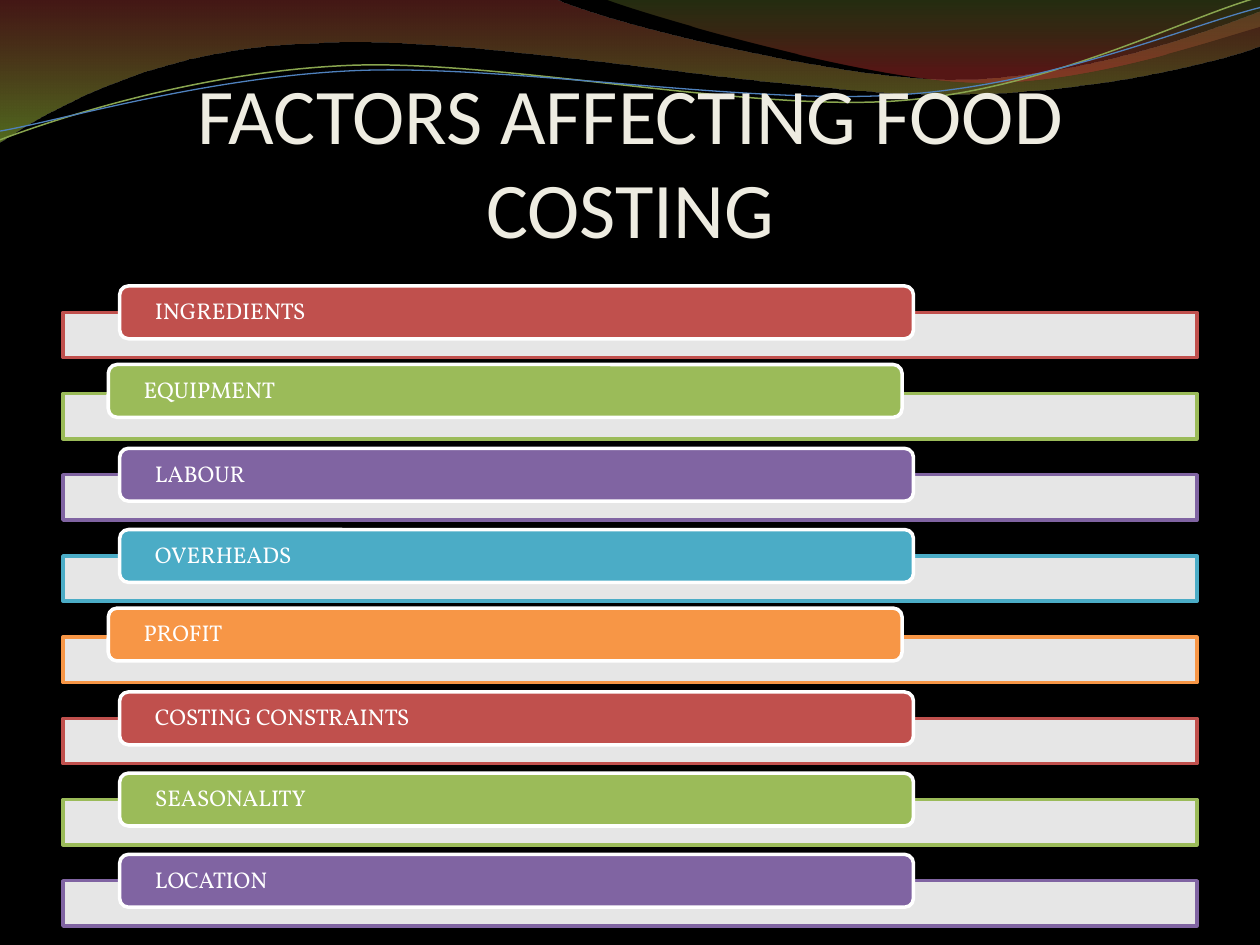
import pptx
import pptx.dml.color
import pptx.enum.shapes
import pptx.enum.text
import pptx.oxml
import pptx.oxml.ns
import pptx.util
from pptx.dml.color import RGBColor
from pptx.util import Pt

qn = pptx.oxml.ns.qn

BLACK = RGBColor(0x00, 0x00, 0x00)
WHITE = RGBColor(0xFF, 0xFF, 0xFF)
CREAM = RGBColor(0xEE, 0xEC, 0xE1)
RED = RGBColor(0xC0, 0x50, 0x4D)
GREEN = RGBColor(0x9B, 0xBB, 0x59)
PURPLE = RGBColor(0x80, 0x64, 0xA2)
TEAL = RGBColor(0x4B, 0xAC, 0xC6)
ORANGE = RGBColor(0xF7, 0x96, 0x46)
BRICK = RGBColor(0x97, 0x33, 0x30)
LIME = RGBColor(0x95, 0xC2, 0x38)
OLIVE = RGBColor(0x76, 0x95, 0x37)
SCARLET = RGBColor(0xBE, 0x33, 0x30)
MOSS = RGBColor(0x89, 0xA5, 0x4F)
BLUE = RGBColor(0x4F, 0x81, 0xBD)

# Each outline is a start point, then segments: 2 numbers for a line, 6 for a curve
# Each gradient stop is position, colour, opacity in percent
BANDS = [
    ([(0, 0), (316.8, -0.7),
      (342.7, 12.2, 478.1, 45.4, 545.8, 45.4), (614.2, 45.4, 689.8, 18.7, 720, 6.5),
      (720.7, 25.9),
      (707.8, 31.7, 626.4, 54.7, 537.1, 54), (447.8, 54, 275, 20.2, 185, 24.5),
      (92.9, 25.9, 33.1, 59.8, -0.7, 81.4)],
     [(0, BRICK, 45), (1, LIME, 55)]),
    ([(344.9, -0.7),
      (366.5, 7.9, 491, 44.6, 553.7, 46.8), (616.3, 49.7, 691.9, 23, 720, 15.1),
      (720, 0)],
     [(0, OLIVE, 30), (0.8, SCARLET, 45)]),
]
STRANDS = [
    ([(0, 79.9), (34.6, 67, 113.8, 41, 199.4, 37.4),
      (284.4, 33.8, 427, 64.1, 513.4, 57.6), (599.8, 51.1, 675.4, 10.8, 718.6, -1.4)],
     MOSS, 0.85),
    ([(0, 74.9), (33.8, 69.1, 118.1, 43.9, 203.8, 40.3),
      (290.2, 36.7, 429.8, 60.5, 516.2, 54), (601.9, 48.2, 677.5, 15.1, 720, 4.3)],
     BLUE, 0.75),
]

# Label, colour, and whether its tab sits slightly up and to the left
FACTORS = [
    ("INGREDIENTS", RED, False),
    ("EQUIPMENT", GREEN, True),
    ("LABOUR", PURPLE, False),
    ("OVERHEADS", TEAL, False),
    ("PROFIT", ORANGE, True),
    ("COSTING CONSTRAINTS", RED, False),
    ("SEASONALITY", GREEN, False),
    ("LOCATION", PURPLE, False),
]


def set_opacity(shape, percents):
    """Apply opacities to the fill colours of a shape, in order."""
    colours = shape._element.spPr.iter(qn("a:srgbClr"))
    for colour, percent in zip(list(colours), percents):
        alpha = pptx.oxml.parse_xml(
            f'<a:alpha {pptx.oxml.ns.nsdecls("a")} val="{percent * 1000}"/>')
        colour.append(alpha)


def add_curve(slide, left, top, outline, close):
    """Build a freeform whose 6-number segments are Bezier curves."""
    points = [(Pt(left + x), Pt(top + y))
              for segment in outline
              for x, y in zip(segment[::2], segment[1::2])]
    builder = slide.shapes.build_freeform(*points[0])
    builder.add_line_segments(points[1:], close=close)
    shape = builder.convert_to_shape()
    shape.shadow.inherit = False
    steps = iter(list(shape._element.iter(qn("a:lnTo"))))
    for segment in outline[1:]:
        step = next(steps)
        if len(segment) == 6:
            step.tag = qn("a:cubicBezTo")
            for _ in range(2):
                extra = next(steps)
                step.append(extra[0])
                extra.getparent().remove(extra)
    return shape


def add_waves(slide, left, top):
    # Translucent bands
    for outline, stops in BANDS:
        band = add_curve(slide, left, top, outline, True)
        band.fill.gradient()
        band.fill.gradient_angle = 270
        for stop, (position, colour, _) in zip(band.fill.gradient_stops, stops):
            stop.position = position
            stop.color.rgb = colour
        set_opacity(band, [percent for _, _, percent in stops])
        band.line.fill.background()
    # Thin strands
    for outline, colour, width in STRANDS:
        strand = add_curve(slide, left, top, outline, False)
        strand.fill.background()
        strand.line.color.rgb = colour
        strand.line.width = Pt(width)


def write(frame, text, font_name, size, colour):
    frame.word_wrap = True
    frame.text = text
    font = frame.paragraphs[0].runs[0].font
    font.name, font.size, font.color.rgb = font_name, Pt(size), colour


def add_title(slide, left, top, width, height):
    box = slide.shapes.add_textbox(Pt(left), Pt(top), Pt(width), Pt(height))
    frame = box.text_frame
    frame.margin_left = frame.margin_right = frame.margin_bottom = 0
    frame.margin_top = Pt(3.6)
    frame.vertical_anchor = pptx.enum.text.MSO_ANCHOR.BOTTOM
    write(frame, "FACTORS AFFECTING FOOD COSTING", "Calibri", 45, CREAM)
    frame.paragraphs[0].alignment = pptx.enum.text.PP_ALIGN.CENTER


def add_block(slide, kind, left, top, width, height, fill, line):
    block = slide.shapes.add_shape(kind, Pt(left), Pt(top), Pt(width), Pt(height))
    block.shadow.inherit = False
    block.fill.solid()
    block.fill.fore_color.rgb = fill
    block.line.color.rgb = line
    block.line.width = Pt(2)
    return block


def add_factors(slide, left, top, width, height):
    kinds = pptx.enum.shapes.MSO_SHAPE
    bar_height, tab_height, tab_rise = 25.9, 30.2, 15.1
    first_bar = top + tab_rise
    pitch = (height - tab_rise - bar_height) / (len(FACTORS) - 1)
    for row, (label, colour, shifted) in enumerate(FACTORS):
        # Pale bar behind
        bar_top = first_bar + row * pitch
        bar = add_block(slide, kinds.RECTANGLE, left, bar_top, width, bar_height,
                        WHITE, colour)
        set_opacity(bar, [90])
        # Coloured tab with the label
        tab_left = left + width * 0.05 - (6.5 if shifted else 0)
        tab_top = bar_top - tab_rise - (1.5 if shifted else 0)
        tab = add_block(slide, kinds.ROUNDED_RECTANGLE, tab_left, tab_top,
                        width * 0.7, tab_height, colour, WHITE)
        frame = tab.text_frame
        frame.margin_left = frame.margin_right = Pt(18.7)
        frame.margin_top = frame.margin_bottom = 0
        frame.vertical_anchor = pptx.enum.text.MSO_ANCHOR.MIDDLE
        write(frame, label, "Vollkorn", 13, WHITE)
        frame.paragraphs[0].alignment = pptx.enum.text.PP_ALIGN.LEFT
        frame.paragraphs[0].line_spacing = 0.9


def main():
    deck = pptx.Presentation()
    deck.slide_width, deck.slide_height = Pt(720), Pt(540)
    slide = deck.slides.add_slide(deck.slide_layouts[6])
    slide.background.fill.solid()
    slide.background.fill.fore_color.rgb = BLACK
    add_waves(slide, 0, 0)
    add_title(slide, 36, 33.8, 648, 111.6)
    add_factors(slide, 36, 163.4, 648, 365.8)
    deck.save("out.pptx")


if __name__ == "__main__":
    main()
